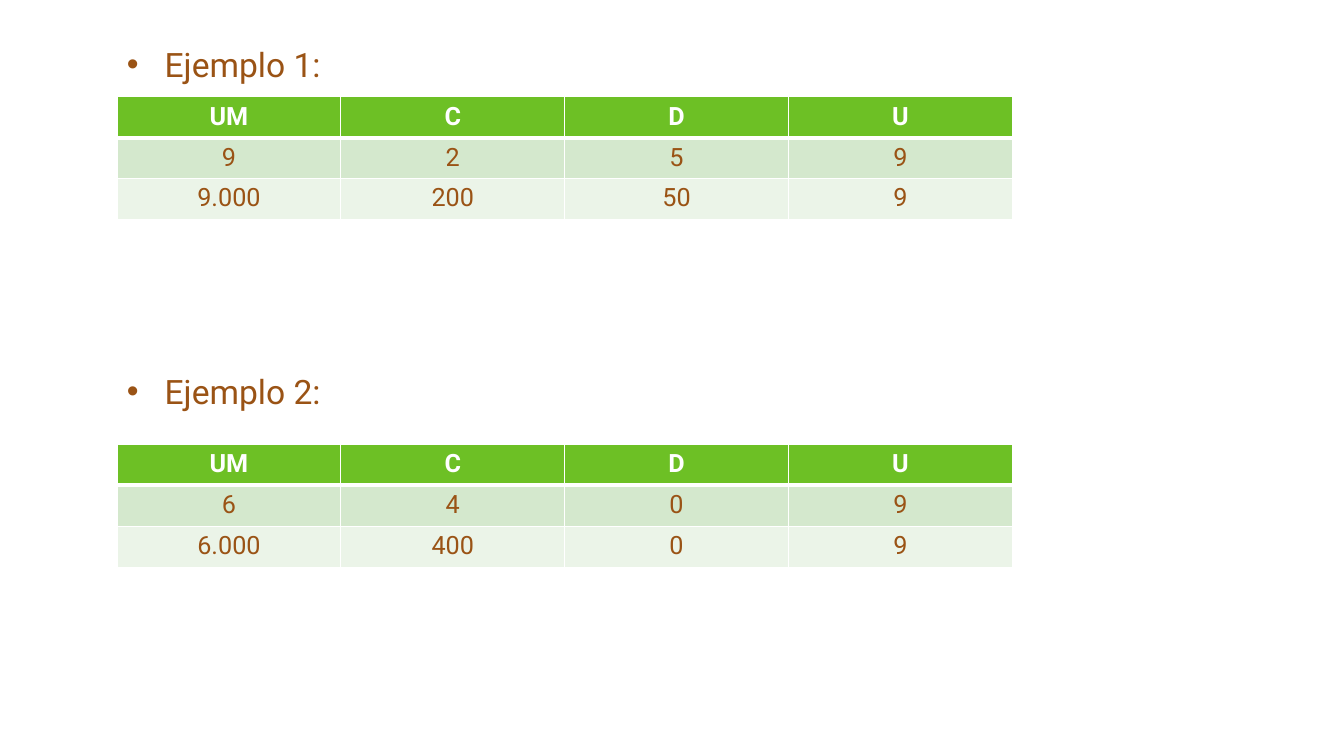
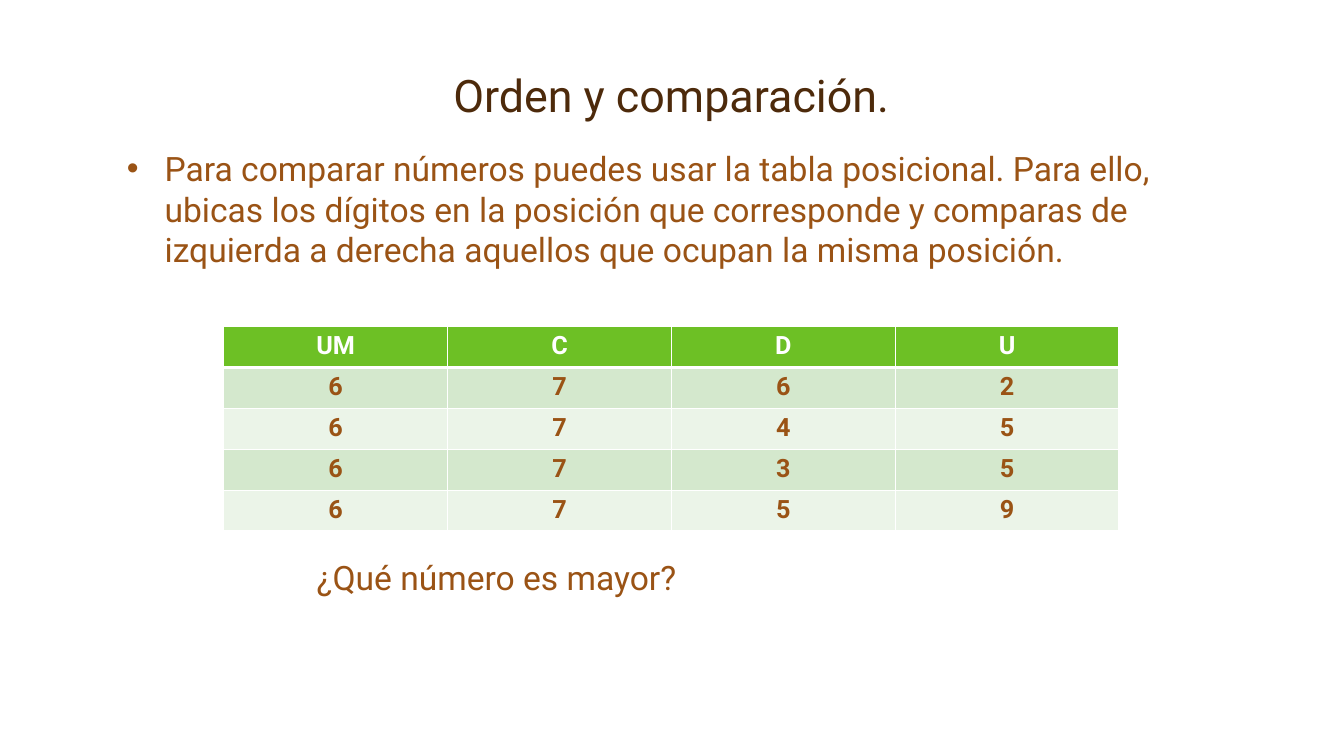
from lxml.etree import SubElement
from pptx import Presentation
from pptx.dml.color import RGBColor
from pptx.enum.text import MSO_ANCHOR as Anchor, PP_ALIGN as Align
from pptx.oxml import parse_xml
from pptx.oxml.ns import nsdecls, qn
from pptx.util import Cm, Pt

WHITE = RGBColor(0xFF, 0xFF, 0xFF)
BROWN = RGBColor(0x9A, 0x53, 0x15)
DARK_BROWN = RGBColor(0x4D, 0x2A, 0x0B)
GREEN = RGBColor(0x6D, 0xC0, 0x25)
BANDS = (RGBColor(0xD4, 0xE8, 0xCD), RGBColor(0xEB, 0xF4, 0xE8))

FONT = "Roboto"
TITLE = {"size": Pt(32), "name": FONT, "bold": False}
BODY = {"size": Pt(24), "name": FONT, "bold": False}
CELL = {"size": Pt(18), "name": FONT}

MARGIN = Cm(2.95)
TEXT_WIDTH = Cm(27.94)
HANGING = Cm(0.95)
COLUMN_WIDTH = Cm(5.64)
ROW_HEIGHT = Cm(1.03)
PLACES = ("UM", "C", "D", "U")


def style(font, formats, color):
    for name, value in formats.items():
        setattr(font, name, value)
    font.color.rgb = color


def add_text(page, text, top, height, left=MARGIN, width=TEXT_WIDTH,
             formats=BODY, color=BROWN):
    box = page.shapes.add_textbox(left, top, width, height)
    box.text_frame.word_wrap = True
    para = box.text_frame.paragraphs[0]
    span = para.add_run()
    span.text = text
    style(span.font, formats, color)
    return box


def add_title(page, text):
    box = add_text(page, text, Cm(0.84), Cm(2.36),
                   formats=TITLE, color=DARK_BROWN)
    box.text_frame.vertical_anchor = Anchor.BOTTOM
    para = box.text_frame.paragraphs[0]
    para.alignment = Align.CENTER
    para.line_spacing = 0.9


def add_bullet(page, text, top, height=Cm(1.3)):
    box = add_text(page, text, top, height)
    properties = box.text_frame.paragraphs[0]._p.get_or_add_pPr()
    properties.set("marL", str(HANGING))
    properties.set("indent", str(-HANGING))
    SubElement(properties, qn("a:buFont")).set("typeface", "Arial")
    SubElement(properties, qn("a:buChar")).set("char", "•")


def set_borders(cell, top, bottom):
    """Draw white borders; top and bottom are widths in points."""
    properties = cell._tc.get_or_add_tcPr()
    widths = {"lnL": 1, "lnR": 1, "lnT": top, "lnB": bottom}
    for index, (side, width) in enumerate(widths.items()):
        properties.insert(index, parse_xml(
            f'<a:{side} {nsdecls("a")} w="{Pt(width)}"><a:solidFill>'
            f'<a:srgbClr val="{WHITE}"/></a:solidFill></a:{side}>'))


def add_place_table(page, left, top, numbers, bold=False):
    """Add a place-value table with one row of digits per number."""
    rows = [PLACES, *numbers]
    table = page.shapes.add_table(
        len(rows), len(PLACES), left, top,
        COLUMN_WIDTH * len(PLACES), ROW_HEIGHT * len(rows)).table
    for column in table.columns:
        column.width = COLUMN_WIDTH
    for r, values in enumerate(rows):
        table.rows[r].height = ROW_HEIGHT
        header = r == 0
        for c, value in enumerate(values):
            cell = table.cell(r, c)
            cell.fill.solid()
            cell.fill.fore_color.rgb = GREEN if header else BANDS[(r - 1) % 2]
            set_borders(cell, top=3 if r == 1 else 1, bottom=3 if header else 1)
            para = cell.text_frame.paragraphs[0]
            para.alignment = Align.CENTER
            span = para.add_run()
            span.text = value
            style(span.font, {**CELL, "bold": header or bold},
                  WHITE if header else BROWN)


def build_examples(page):
    add_bullet(page, "Ejemplo 1:", Cm(0.99))
    add_place_table(page, MARGIN, Cm(2.44),
                    [("9", "2", "5", "9"), ("9.000", "200", "50", "9")])
    add_bullet(page, "Ejemplo 2:", Cm(9.23))
    add_place_table(page, MARGIN, Cm(11.2),
                    [("6", "4", "0", "9"), ("6.000", "400", "0", "9")])


def build_comparison(page):
    add_title(page, "Orden y comparación.")
    add_bullet(page, "Para comparar números puedes usar la tabla posicional. "
               "Para ello, ubicas los dígitos en la posición que corresponde y "
               "comparas de izquierda a derecha aquellos que ocupan la misma "
               "posición.", Cm(3.61), Cm(3.4))
    add_place_table(page, Cm(5.64), Cm(8.23),
                    ["6762", "6745", "6735", "6759"], bold=True)
    add_text(page, "¿Qué número es mayor?", Cm(13.91), Cm(1.3),
             left=Cm(7.73), width=Cm(12))


def main():
    deck = Presentation()
    deck.slide_width, deck.slide_height = Cm(33.87), Cm(19.05)
    for build in (build_examples, build_comparison):
        build(deck.slides.add_slide(deck.slide_layouts[6]))
    deck.save("out.pptx")


if __name__ == "__main__":
    main()
